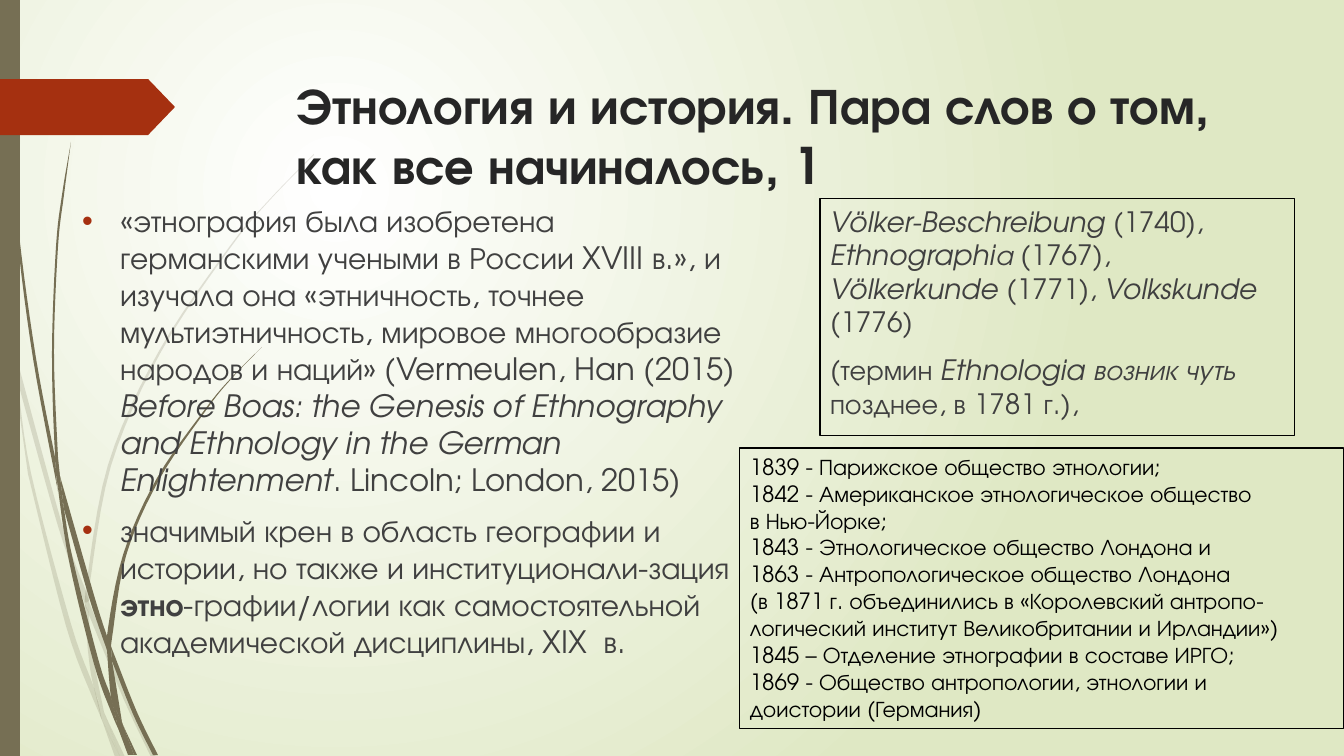
from lxml import etree
from pptx import Presentation, util as u
from pptx.dml.color import RGBColor
from pptx.enum import shapes, text
from pptx.oxml.ns import qn

FONT = "TeX Gyre Adventor"
OLIVE, RUST, DARK, GREY, BLACK = "766F54", "A53010", "262626", "404040", "000000"
WIDE, HIGH = 1344, 756

TITLE = [[("Этнология и история. Пара слов о том, как все начиналось, 1", "b")]]

# Paragraphs are lists of runs: (words, style), i = italic, b = bold
LEFT = [
    [("«этнография была изобретена германскими учеными в России XVIII в.», и "
      "изучала она «этничность, точнее мультиэтничность, мировое многообразие "
      "народов и наций» (", ""),
     ("Vermeulen, Han (2015) ", ""),
     ("Before Boas: the Genesis of Ethnography and Ethnology in the German "
      "Enlightenment", "i"),
     (". Lincoln; London, 2015)", "")],
    [("значимый крен в область географии и истории, но также и "
      "институционали-зация ", ""),
     ("этно", "b"),
     ("-графии/логии как самостоятельной академической дисциплины, XIX  в.", "")],
]

TERMS = [
    [("Völker-Beschreibung ", "i"), ("(1740), ", ""), ("Ethnographiа ", "i"),
     ("(1767), ", ""), ("Völkerkunde ", "i"), ("(1771), ", ""),
     ("Volkskunde ", "i"), ("(1776)", "")],
    [("(термин ", ""), ("Ethnologia возник чуть ", "i"),
     ("позднее, в 1781 г.),", "")],
]

DATES = [[(line, "")] for line in (
    "1839 - Парижское общество этнологии;",
    "1842 - Американское этнологическое общество",
    "в Нью-Йорке;",
    "1843 - Этнологическое общество Лондона и",
    "1863 - Антропологическое общество Лондона",
    "(в 1871 г. объединились в «Королевский антропо-",
    "логический институт Великобритании и Ирландии»)",
    "1845 – Отделение этнографии в составе ИРГО;",
    "1869 - Общество антропологии, этнологии и",
    "доистории (Германия)",
)]

# Grass pieces: one edge going down, the other going back up
PALE = [
    ([(0, 284), (9, 325), (11, 353)], [(10, 347), (0, 301)]),
    ([(14, 348), (62, 524), (86, 591)], [(85, 604), (58, 526), (17, 379)]),
    ([(89, 601), (93, 612), (128, 698), (156, 757)],
     [(151, 757), (124, 700), (89, 615)]),
    ([(106, 717), (125, 757)], [(120, 757)]),
    ([(11, 353), (17, 379), (31, 473), (71, 624), (94, 688), (102, 720)],
     [(93, 699), (66, 626), (28, 474)]),
    ([(85, 604), (88, 651), (94, 688), (106, 717)],
     [(104, 712), (92, 651), (89, 615), (89, 613)]),
    ([(314, 154), (270, 199), (230, 246), (159, 351), (108, 465), (86, 589), (89, 601)],
     [(89, 589), (111, 466), (161, 352), (231, 247), (270, 200), (314, 155)]),
    ([(102, 720), (115, 757)], [(120, 757)]),
    ([(86, 591), (85, 604), (89, 613)], [(89, 615), (89, 601)]),
    ([(94, 688), (100, 713), (102, 720), (120, 757)], [(106, 717), (97, 698)]),
]
FULL = [
    ([(3, 0), (4, 48), (7, 111), (17, 235), (33, 358), (56, 481), (57, 485)],
     [(55, 457), (36, 358), (19, 234), (8, 110), (5, 48), (4, 0)]),
    ([(60, 476), (94, 595), (107, 636)], [(107, 650), (89, 597), (64, 509)]),
    ([(111, 646), (114, 654), (137, 712), (158, 755)],
     [(153, 755), (133, 714), (112, 661)]),
    ([(57, 481), (69, 561), (94, 664), (112, 714), (118, 728)],
     [(117, 723), (111, 697), (99, 662), (73, 560), (64, 509)]),
    ([(71, 142), (62, 195), (56, 247), (52, 352), (55, 453), (60, 476)],
     [(58, 457), (54, 352), (58, 247), (64, 195), (71, 142)]),
    ([(123, 725), (137, 755)], [(134, 755)]),
    ([(55, 453), (55, 457), (57, 481), (64, 509)], [(60, 476)]),
    ([(262, 347), (233, 376), (206, 408), (157, 478), (123, 555), (107, 636), (111, 646)],
     [(112, 638), (126, 556), (159, 480), (207, 409), (233, 377), (262, 347)]),
    ([(118, 728), (128, 755)], [(132, 755)]),
    ([(107, 650), (111, 697), (117, 712), (123, 725)],
     [(122, 722), (112, 661), (110, 656)]),
    ([(107, 636), (107, 650), (112, 661)], [(111, 646)]),
    ([(111, 697), (117, 723), (118, 728), (131, 755)],
     [(134, 755), (123, 725), (117, 712)]),
]


def px(n):
    return u.Emu(round(n * 914400 / 100.8))


def rgb(code):
    return RGBColor.from_string(code)


def paint(shape, code, alpha=100):
    shape.shadow.inherit = False
    shape.fill.solid()
    shape.fill.fore_color.rgb = rgb(code)
    shape.line.fill.background()
    if alpha < 100:
        clr = shape._element.spPr.find(".//" + qn("a:srgbClr"))
        etree.SubElement(clr, qn("a:alpha"), val=str(alpha * 1000))


def curve(pts, steps=6):
    """Smooth line through the points (Catmull-Rom)."""
    ends = [pts[0], *pts, pts[-1]]
    out = []
    for a, b, c, d in zip(ends, ends[1:], ends[2:], ends[3:]):
        for k in range(steps):
            t = k / steps
            out.append(tuple(
                (2 * q + (r - p) * t + (2 * p - 5 * q + 4 * r - s) * t ** 2
                 + (3 * q - p - 3 * r + s) * t ** 3) / 2
                for p, q, r, s in zip(a, b, c, d)))
    return out + [pts[-1]]


def place(shape, x, y, w, h):
    shape.left, shape.top, shape.width, shape.height = map(px, (x, y, w, h))


def write(shape, paras, size, code, gap=0, bullet=False):
    frame = shape.text_frame
    frame.word_wrap = True
    frame.auto_size = text.MSO_AUTO_SIZE.NONE
    frame.vertical_anchor = text.MSO_ANCHOR.TOP
    for k, runs in enumerate(paras):
        para = frame.add_paragraph() if k else frame.paragraphs[0]
        para.alignment = text.PP_ALIGN.LEFT
        para.space_before = u.Pt(gap)
        font = para.font
        font.name, font.size, font.color.rgb = FONT, u.Pt(size), rgb(code)
        for words, style in runs:
            run = para.add_run()
            run.text = words
            if style:
                run.font.bold, run.font.italic = style == "b", style == "i"
        props = para._p.get_or_add_pPr()
        indent = px(38) if bullet else 0
        props.set("marL", str(indent))
        props.set("indent", str(-indent))
        marks = [("a:buNone", {})]
        if bullet:
            clr = etree.Element(qn("a:buClr"))
            etree.SubElement(clr, qn("a:srgbClr"), val=RUST)
            props.insert_element_before(clr, "a:defRPr")
            marks = [("a:buFont", {"typeface": "Arial"}), ("a:buChar", {"char": "•"})]
        for tag, attrs in marks:
            props.insert_element_before(etree.Element(qn(tag), attrs), "a:defRPr")


def outline(shape):
    shape.line.color.rgb = rgb(BLACK)
    shape.line.width = u.Pt(0.75)


def main():
    deck = Presentation()
    deck.slide_width, deck.slide_height = px(WIDE), px(HIGH)
    slide = deck.slides.add_slide(deck.slide_layouts[3])
    parts = slide.shapes

    # Background: round gradient
    back = slide.background.fill
    back.gradient()
    for stop, code in zip(back.gradient_stops, ("FFFFFF", "DFE8C4")):
        stop.color.rgb = rgb(code)
    grad = slide._element.find(".//" + qn("a:gradFill"))
    ring = etree.Element(qn("a:path"), path="circle")
    etree.SubElement(ring, qn("a:fillToRect"),
                     l="50000", t="50000", r="100000", b="100000")
    grad.replace(grad.find(qn("a:lin")), ring)

    # Grass, side band and arrow tab
    for alpha, blades in ((20, PALE), (100, FULL)):
        for down, up in blades:
            pts = [(px(x), px(y)) for x, y in curve(down) + curve(up)]
            pen = parts.build_freeform(*pts[0])
            pen.add_line_segments(pts[1:], close=True)
            paint(pen.convert_to_shape(), OLIVE, alpha)
    band = parts.add_shape(shapes.MSO_SHAPE.RECTANGLE, 0, 0, px(20), px(HIGH))
    paint(band, OLIVE)
    tab = parts.add_shape(shapes.MSO_SHAPE.PENTAGON, 0, px(79), px(175), px(56))
    tab.adjustments[0] = 0.48
    paint(tab, RUST)

    # Title and lists, in front of the grass
    title, left, terms = list(slide.placeholders)
    for holder in (title, left, terms):
        parts._spTree.append(holder._element)
    place(title, 286, 69, 983, 141)
    write(title, TITLE, 36, DARK)
    place(left, 72, 197, 674, 533)
    write(left, LEFT, 22, GREY, gap=10, bullet=True)
    place(terms, 820, 199, 475, 237)
    write(terms, TERMS, 20, GREY, gap=10)
    outline(terms)

    # Dates of the societies
    dates = parts.add_textbox(px(740), px(448), px(604), px(281))
    write(dates, DATES, 16, BLACK)
    outline(dates)

    deck.save("out.pptx")


if __name__ == "__main__":
    main()
